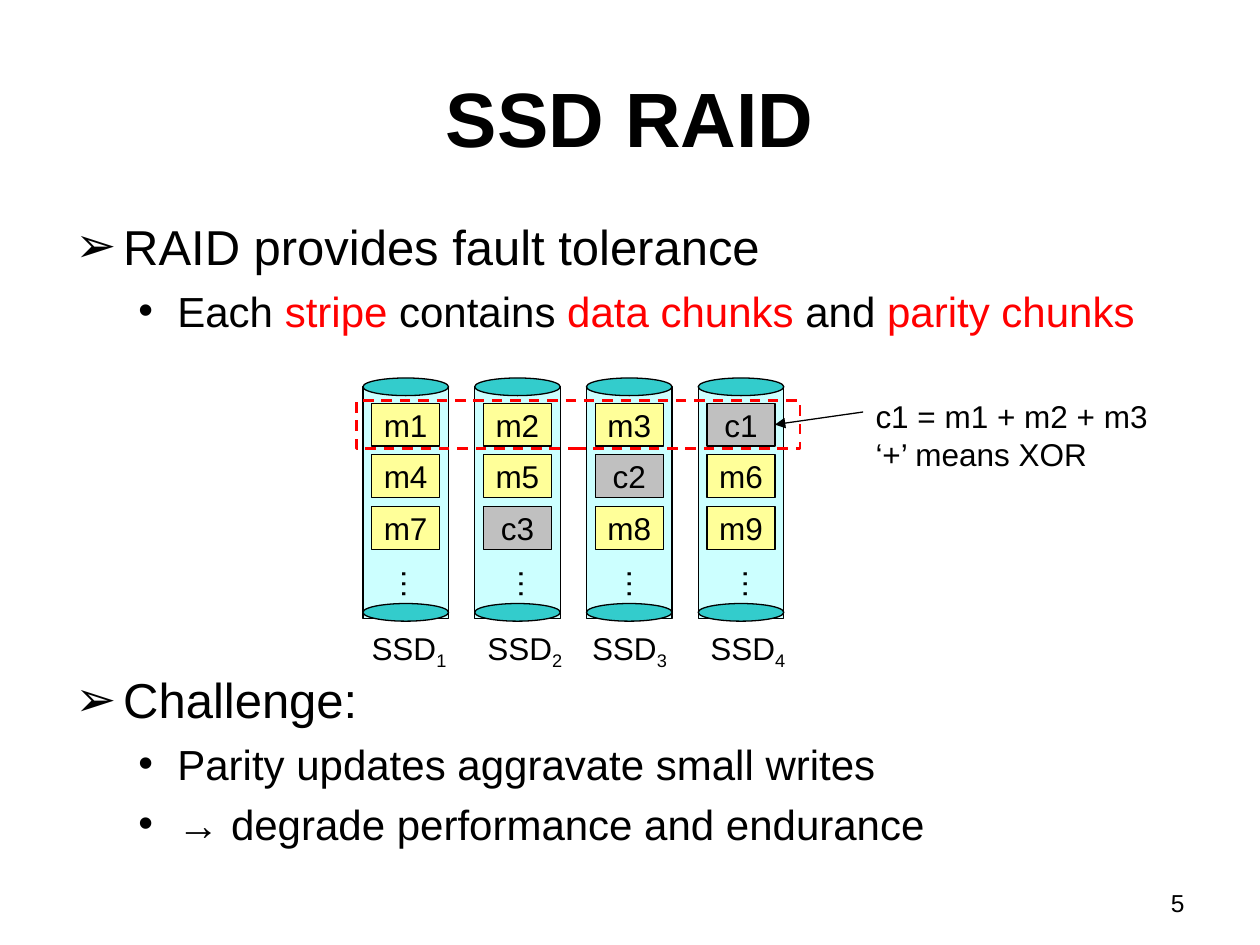
from lxml.etree import SubElement
from pptx import Presentation
from pptx.dml.color import RGBColor
from pptx.enum.dml import MSO_LINE
from pptx.enum.shapes import MSO_CONNECTOR, MSO_SHAPE
from pptx.enum.text import MSO_ANCHOR, MSO_AUTO_SIZE, PP_ALIGN
from pptx.oxml.ns import qn
from pptx.util import Inches, Pt

BLACK = RGBColor(0x00, 0x00, 0x00)
RED = RGBColor(0xFF, 0x00, 0x00)
DRIVE = RGBColor(0xCC, 0xFF, 0xFF)
CAP = RGBColor(0x33, 0xCC, 0xCC)
DATA = RGBColor(0xFF, 0xFF, 0x99)
PARITY = RGBColor(0xC0, 0xC0, 0xC0)

# Each drive: chunks from top to bottom, left of its label, left of its dots
DRIVES = [
    (["m1", "m4", "m7"], 2.85, 3.08),
    (["m2", "m5", "c3"], 3.77, 4.01),
    (["m3", "c2", "m8"], 4.60, 4.87),
    (["c1", "m6", "m9"], 5.54, 5.79),
]
DRIVE_LEFT, DRIVE_PITCH, DRIVE_WIDTH = 2.88, 0.887, 0.68
CHUNK_TOP, CHUNK_PITCH = 3.2, 0.41

# Body text: level, space before in points, spans of text and colour
BODY = [
    (0, 0, [("RAID provides fault tolerance", BLACK)]),
    (1, 5.5, [("Each ", BLACK), ("stripe", RED), (" contains ", BLACK),
              ("data chunks ", RED), ("and ", BLACK), ("parity chunks", RED)]),
    (0, 191, [("Challenge:", BLACK)]),
    (1, 5.5, [("Parity updates aggravate small writes", BLACK)]),
    (1, 5.5, [("→ degrade performance and endurance", BLACK)]),
]
# Bullet character, size, left margin and hanging indent of each level
LEVELS = [("➢", 28, 0.38, -0.38), ("•", 24, 0.81, -0.31)]


def apply(target, **formats):
    for name, value in formats.items():
        setattr(target, name, value)


def add_span(para, text, size, color=BLACK, **formats):
    span = para.add_run()
    span.text = text
    apply(span.font, name="Arial", size=Pt(size), **formats)
    span.font.color.rgb = color
    return span


def add_box(page, left, top, width, height, wrap=True):
    box = page.shapes.add_textbox(
        Inches(left), Inches(top), Inches(width), Inches(height))
    box.text_frame.word_wrap = wrap
    return box


def add_shape(page, kind, left, top, width, height, fill=None,
              line=BLACK, weight=0.75):
    shape = page.shapes.add_shape(
        kind, Inches(left), Inches(top), Inches(width), Inches(height))
    shape.shadow.inherit = False
    if fill is None:
        shape.fill.background()
    else:
        shape.fill.solid()
        shape.fill.fore_color.rgb = fill
    shape.line.color.rgb = line
    shape.line.width = Pt(weight)
    return shape


def add_title(page, text):
    title = page.shapes.title
    apply(title, left=Inches(0.5), top=Inches(0.3),
          width=Inches(9), height=Inches(1.25))
    title.text_frame.vertical_anchor = MSO_ANCHOR.MIDDLE
    para = title.text_frame.paragraphs[0]
    para.alignment = PP_ALIGN.CENTER
    add_span(para, text, 44, bold=True)


def add_body(page):
    frame = add_box(page, 0.5, 1.67, 9, 5.17).text_frame
    for index, (level, before, spans) in enumerate(BODY):
        para = frame.add_paragraph() if index else frame.paragraphs[0]
        bullet, size, margin, indent = LEVELS[level]
        apply(para, level=level, space_before=Pt(before))
        properties = para._p.get_or_add_pPr()
        properties.set("marL", str(Inches(margin)))
        properties.set("indent", str(Inches(indent)))
        SubElement(properties, qn("a:buFont")).set("typeface", "Arial")
        SubElement(properties, qn("a:buChar")).set("char", bullet)
        for text, color in spans:
            add_span(para, text, size, color)


def add_chunk(page, name, left, top):
    fill = PARITY if name.startswith("c") else DATA
    chunk = add_shape(page, MSO_SHAPE.RECTANGLE, left, top, 0.54, 0.34, fill)
    apply(chunk.text_frame, word_wrap=False, vertical_anchor=MSO_ANCHOR.MIDDLE)
    para = chunk.text_frame.paragraphs[0]
    para.alignment = PP_ALIGN.CENTER
    add_span(para, name, 18)


def add_drive(page, index, chunks, label_left, dots_left):
    left = DRIVE_LEFT + index * DRIVE_PITCH
    add_shape(page, MSO_SHAPE.RECTANGLE, left, 3.07, DRIVE_WIDTH, 1.84, DRIVE)
    for top in (3, 4.79):
        add_shape(page, MSO_SHAPE.OVAL, left, top, DRIVE_WIDTH, 0.14, CAP)
    for row, name in enumerate(chunks):
        add_chunk(page, name, left + 0.07, CHUNK_TOP + row * CHUNK_PITCH)

    # Label with its number as a subscript
    label = add_box(page, label_left, 4.94, 0.81, 0.4, wrap=False)
    para = label.text_frame.paragraphs[0]
    add_span(para, "SSD", 18)
    number = add_span(para, str(index + 1), 18)
    number._r.get_or_add_rPr().set("baseline", "-25000")

    # Vertical dots
    dots = add_box(page, dots_left, 4.42, 0.42, 0.4)
    dots.rotation = 90
    add_span(dots.text_frame.paragraphs[0], "…", 18)


def add_arrow(page, start, end):
    arrow = page.shapes.add_connector(
        MSO_CONNECTOR.STRAIGHT, *map(Inches, start + end))
    arrow.line.color.rgb = BLACK
    arrow.line.width = Pt(0.75)
    SubElement(arrow.line._get_or_add_ln(), qn("a:tailEnd")).set(
        "type", "triangle")
    SubElement(arrow._element.spPr, qn("a:effectLst"))


def add_note(page):
    frame = add_box(page, 6.85, 3.1, 2.42, 0.71).text_frame
    frame.auto_size = MSO_AUTO_SIZE.SHAPE_TO_FIT_TEXT
    para = frame.paragraphs[0]
    add_span(para, "c1 = m1 + m2 + m3", 18)
    para.add_line_break()
    add_span(para, "‘+’ means XOR", 18)


def add_page_number(page, number):
    para = add_box(page, 7.17, 7, 2.33, 0.35).text_frame.paragraphs[0]
    para.alignment = PP_ALIGN.RIGHT
    add_span(para, number, 14)


def main():
    deck = Presentation()
    apply(deck, slide_width=Inches(10), slide_height=Inches(7.5))
    page = deck.slides.add_slide(deck.slide_layouts[5])

    add_title(page, "SSD RAID")
    add_body(page)
    add_page_number(page, "5")

    # Drives with their chunks
    for index, (chunks, label_left, dots_left) in enumerate(DRIVES):
        add_drive(page, index, chunks, label_left, dots_left)

    # First stripe and the note on its parity chunk
    stripe = add_shape(page, MSO_SHAPE.RECTANGLE, 2.83, 3.18, 3.52, 0.38,
                       line=RED, weight=1.5)
    stripe.line.dash_style = MSO_LINE.DASH
    add_arrow(page, (6.85, 3.27), (6.15, 3.37))
    add_note(page)

    deck.save("out.pptx")


if __name__ == "__main__":
    main()
